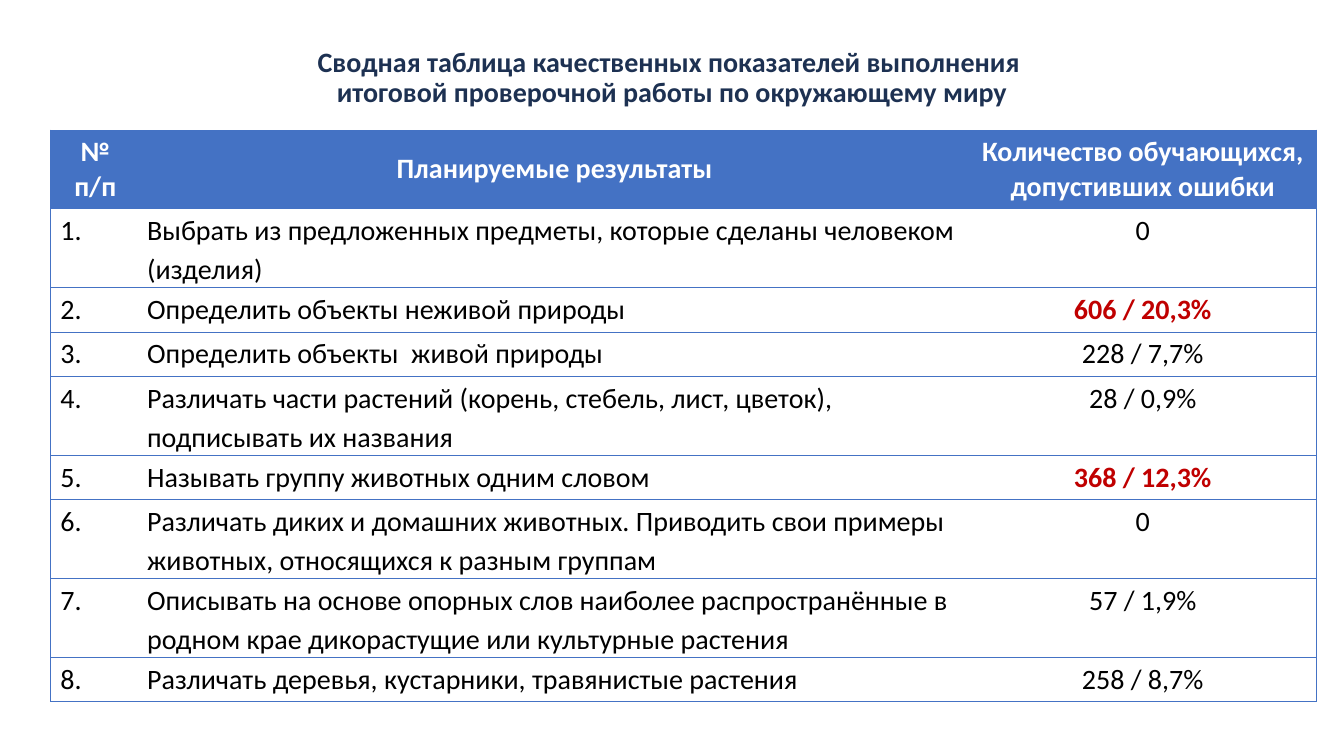
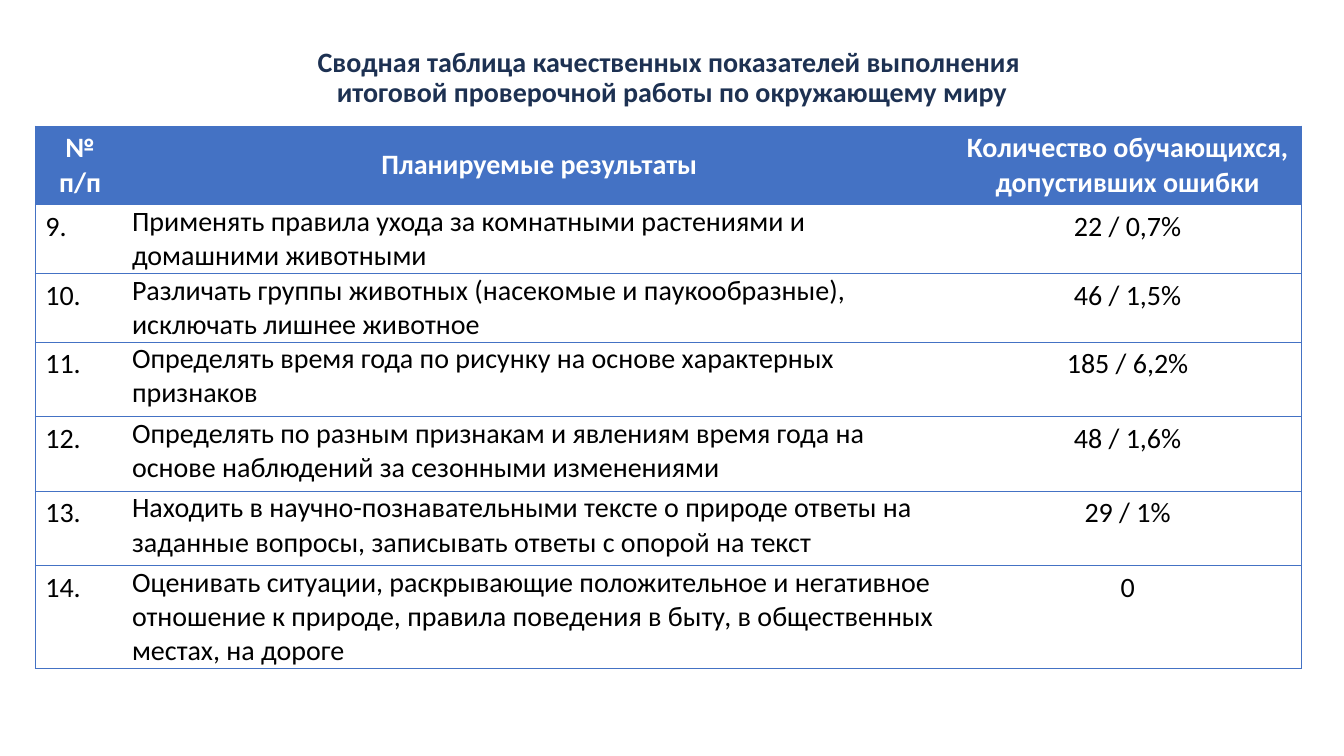
from lxml import etree
from pptx import Presentation
from pptx.dml.color import RGBColor
from pptx.enum.text import MSO_ANCHOR, MSO_AUTO_SIZE, PP_ALIGN
from pptx.oxml.ns import qn
from pptx.util import Inches, Pt

LEFT, CENTER = PP_ALIGN.LEFT, PP_ALIGN.CENTER
TOP, MIDDLE = MSO_ANCHOR.TOP, MSO_ANCHOR.MIDDLE
NO_AUTOFIT = MSO_AUTO_SIZE.NONE

NAVY = RGBColor(0x1D, 0x31, 0x52)
BLUE = RGBColor(0x44, 0x72, 0xC4)
RED = RGBColor(0xC0, 0x00, 0x00)
BLACK = RGBColor(0x00, 0x00, 0x00)
WHITE = RGBColor(0xFF, 0xFF, 0xFF)
FONT = "Calibri"
TEXT_SIZE = Pt(20)
BORDER_WIDTH = Pt(0.5)
TITLE_ONLY = 5

TITLE_LINES = (
    "Сводная таблица качественных показателей выполнения ",
    "итоговой проверочной работы по окружающему миру",
)
HEADERS = (
    "№ п/п",
    "Планируемые результаты",
    "Количество обучающихся, допустивших ошибки",
)
COLUMN_WIDTHS = (0.89, 8.22, 3.45)
HIGH_ERRORS = ("606 / 20,3%", "368 / 12,3%")

# Each row: planned result, pupils with errors, row height in inches
FIRST_RESULTS = (
    ("Выбрать из предложенных предметы, которые сделаны человеком (изделия)", "0", 0.7),
    ("Определить объекты неживой природы", "606 / 20,3%", 0.41),
    ("Определить объекты  живой природы", "228 / 7,7%", 0.41),
    ("Различать части растений (корень, стебель, лист, цветок), "
     "подписывать их названия", "28 / 0,9%", 0.7),
    ("Называть группу животных одним словом", "368 / 12,3%", 0.41),
    ("Различать диких и домашних животных. Приводить свои примеры "
     "животных, относящихся к разным группам", "0", 0.7),
    ("Описывать на основе опорных слов наиболее распространённые в "
     "родном крае дикорастущие или культурные растения", "57 / 1,9%", 0.7),
    ("Различать деревья, кустарники, травянистые растения", "258 / 8,7%", 0.41),
)
SECOND_RESULTS = (
    ("Применять правила ухода за комнатными растениями и домашними животными",
     "22 / 0,7%", 0.55),
    ("Различать группы животных (насекомые и паукообразные), "
     "исключать лишнее животное", "46 / 1,5%", 0.55),
    ("Определять время года по рисунку на основе характерных признаков",
     "185 / 6,2%", 0.74),
    ("Определять по разным признакам и явлениям время года на "
     "основе наблюдений за сезонными изменениями", "48 / 1,6%", 0.74),
    ("Находить в научно-познавательными тексте о природе ответы на "
     "заданные вопросы, записывать ответы с опорой на текст", "29 / 1%", 0.74),
    ("Оценивать ситуации, раскрывающие положительное и негативное "
     "отношение к природе, правила поведения в быту, в общественных "
     "местах, на дороге", "0", 0.83),
)


def add_span(para, text, color, bold):
    span = para.add_run()
    span.text = text
    span.font.name = FONT
    span.font.size = TEXT_SIZE
    span.font.bold = bold
    span.font.color.rgb = color


def add_title(page):
    title = page.shapes.title
    title.left, title.top = Inches(0.77), Inches(0.27)
    title.width, title.height = Inches(11.79), Inches(1.01)
    frame = title.text_frame
    frame.auto_size = NO_AUTOFIT
    frame.word_wrap = True
    frame.vertical_anchor = MIDDLE
    para = frame.paragraphs[0]
    para.alignment = CENTER
    para.line_spacing = 0.9
    for index, line in enumerate(TITLE_LINES):
        if index:
            para.add_line_break()
        add_span(para, line, NAVY, True)


def set_borders(cell, column):
    """Draw the horizontal rules and the outer frame, without inner verticals."""
    drawn = {
        "a:lnL": column == 0,
        "a:lnR": column == len(HEADERS) - 1,
        "a:lnT": True,
        "a:lnB": True,
    }
    properties = cell._tc.get_or_add_tcPr()
    for tag, visible in drawn.items():
        line = etree.SubElement(properties, qn(tag), w=str(BORDER_WIDTH))
        if visible:
            fill = etree.SubElement(line, qn("a:solidFill"))
            etree.SubElement(fill, qn("a:srgbClr"), val=str(BLUE))
        else:
            etree.SubElement(line, qn("a:noFill"))


def fill_cell(cell, column, text, color=BLACK, bold=False, align=LEFT, anchor=TOP, fill=None):
    set_borders(cell, column)
    if fill is None:
        cell.fill.background()
    else:
        cell.fill.solid()
        cell.fill.fore_color.rgb = fill
    cell.vertical_anchor = anchor
    para = cell.text_frame.paragraphs[0]
    para.alignment = align
    add_span(para, text, color, bold)


def fill_result(cell, text, spacing):
    fill_cell(cell, 1, text)
    cell.margin_left = cell.margin_right = Inches(0.07)
    cell.margin_top = cell.margin_bottom = 0
    if spacing:
        cell.text_frame.paragraphs[0].line_spacing = spacing


def add_results_table(page, left, top, header_height, results, first_number, spacing=None):
    heights = [header_height] + [height for _, _, height in results]
    table = page.shapes.add_table(
        len(heights), len(HEADERS), Inches(left), Inches(top),
        Inches(sum(COLUMN_WIDTHS)), Inches(sum(heights))).table
    table.first_row = table.horz_banding = False
    for column, width in zip(table.columns, COLUMN_WIDTHS):
        column.width = Inches(width)
    for row, height in zip(table.rows, heights):
        row.height = Inches(height)

    for column, header in enumerate(HEADERS):
        fill_cell(table.cell(0, column), column, header, WHITE, True, CENTER, MIDDLE, BLUE)
    for row, (result, errors, _) in enumerate(results, start=1):
        high = errors in HIGH_ERRORS
        fill_cell(table.cell(row, 0), 0, f"{first_number + row - 1}.")
        fill_result(table.cell(row, 1), result, spacing)
        fill_cell(table.cell(row, 2), 2, errors, RED if high else BLACK, high, CENTER)


def add_page(deck):
    page = deck.slides.add_slide(deck.slide_layouts[TITLE_ONLY])
    add_title(page)
    return page


def main():
    deck = Presentation()
    deck.slide_width, deck.slide_height = Inches(13.33), Inches(7.5)
    add_results_table(add_page(deck), 0.5, 1.29, 0.72, FIRST_RESULTS, 1, spacing=1.15)
    add_results_table(add_page(deck), 0.35, 1.25, 0.64, SECOND_RESULTS,
                      len(FIRST_RESULTS) + 1)
    deck.save("out.pptx")


if __name__ == "__main__":
    main()
